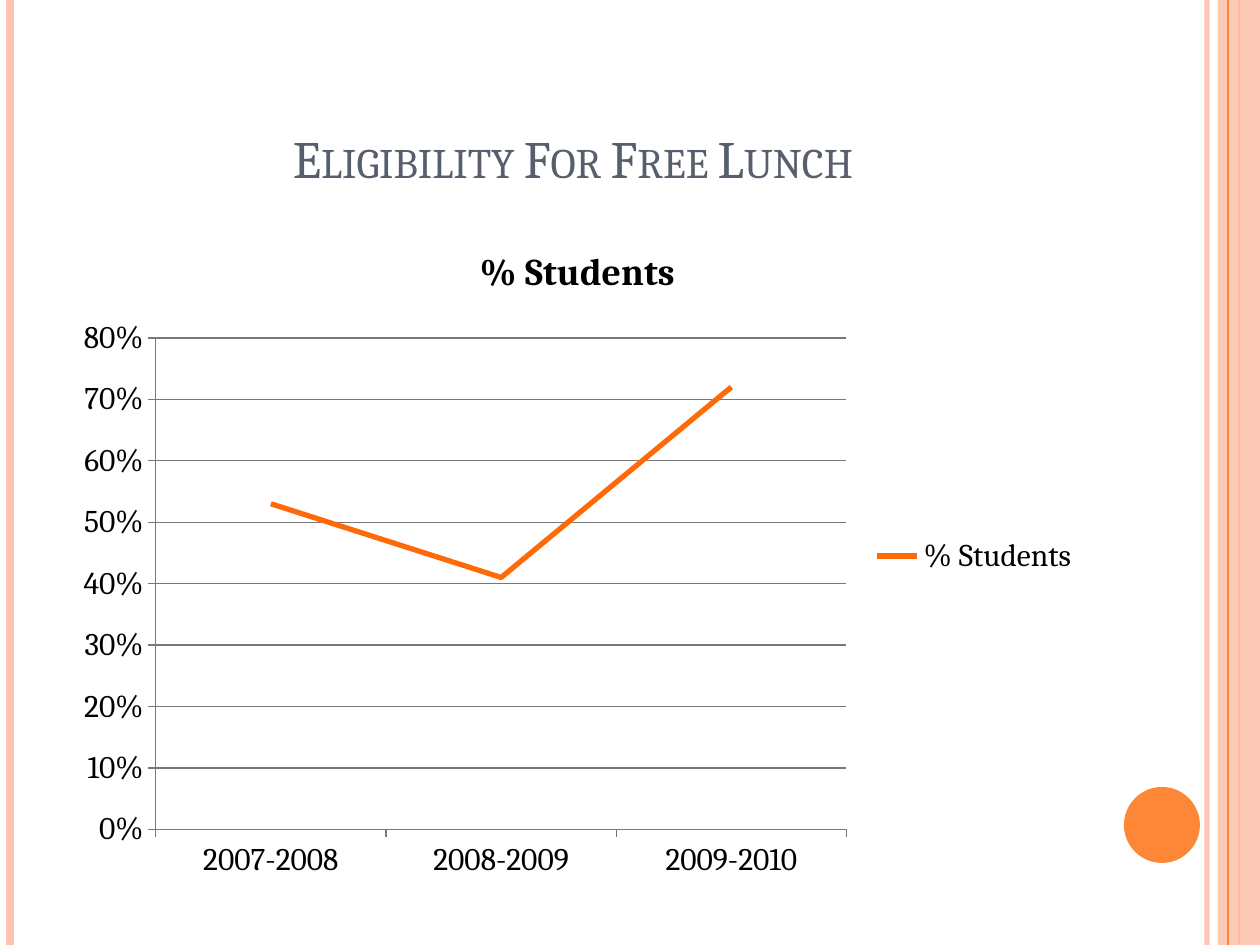
from lxml.etree import SubElement
from pptx import Presentation
from pptx.chart.data import CategoryChartData
from pptx.dml.color import RGBColor
from pptx.enum.chart import XL_CHART_TYPE as ChartType, XL_LEGEND_POSITION as LegendPos, XL_TICK_MARK as Tick
from pptx.enum.shapes import MSO_CONNECTOR as Connector, MSO_SHAPE as Shape
from pptx.enum.text import MSO_ANCHOR as Anchor, PP_ALIGN as Align
from pptx.oxml.ns import qn
from pptx.util import Emu, Pt

SCALE = 914400 / 126
WIDTH, HEIGHT = 1260, 945
FONT = "Cambria"
COLORS = {
    "peach": "FEC3AE",
    "orange": "FE8637",
    "trend": "FF6A08",
    "slate": "575F6D",
    "black": "000000",
    "grid": "787878",
}
ENROLMENT_YEARS = ["2007-2008", "2008-2009", "2009-2010"]
ELIGIBLE_SHARES = [0.53, 0.41, 0.72]


def px(length):
    return Emu(round(length * SCALE))


def box(*lengths):
    return [px(length) for length in lengths]


def rgb(name):
    return RGBColor.from_string(COLORS[name])


def assign(target, values):
    for name, value in values.items():
        setattr(target, name, value)


def style_font(font, size, color="black", bold=False):
    assign(font, {"name": FONT, "size": Pt(size), "bold": bold})
    font.color.rgb = rgb(color)


def style_line(line, color, points):
    line.color.rgb = rgb(color)
    line.width = Pt(points)


def set_alpha(fill_parent, percent):
    color = fill_parent.find(".//" + qn("a:srgbClr"))
    SubElement(color, qn("a:alpha")).set("val", str(percent * 1000))


def add_stripe(slide, x, color, points, alpha=100):
    stripe = slide.shapes.add_connector(Connector.STRAIGHT, *box(x, 0, x, HEIGHT))
    style_line(stripe.line, color, points)
    properties = stripe._element.spPr
    if alpha < 100:
        set_alpha(properties, alpha)
    SubElement(properties, qn("a:effectLst"))


def add_solid(slide, preset, bounds, color, alpha=100):
    solid = slide.shapes.add_shape(preset, *box(*bounds))
    solid.shadow.inherit = False
    solid.fill.solid()
    solid.fill.fore_color.rgb = rgb(color)
    solid.line.fill.background()
    if alpha < 100:
        set_alpha(solid._element.spPr, alpha)


def add_title(slide, text, bounds):
    frame = slide.shapes.add_textbox(*box(*bounds)).text_frame
    assign(frame, {"word_wrap": True, "vertical_anchor": Anchor.BOTTOM})
    heading = frame.paragraphs[0]
    heading.alignment = Align.CENTER
    run = heading.add_run()
    run.text = text
    style_font(run.font, 30, "slate")
    run.font._element.set("cap", "small")


def add_lunch_chart(slide, bounds):
    lunch_data = CategoryChartData(number_format="0%")
    lunch_data.categories = ENROLMENT_YEARS
    lunch_data.add_series("% Students", ELIGIBLE_SHARES)
    chart = slide.shapes.add_chart(ChartType.LINE, *box(*bounds), lunch_data).chart
    style_font(chart.font, 18)

    chart.has_title = True
    heading = chart.chart_title.text_frame
    heading.text = "% Students"
    style_font(heading.paragraphs[0].runs[0].font, 21.6, bold=True)
    chart.chart_title.include_in_layout = False

    chart.has_legend = True
    assign(chart.legend, {"position": LegendPos.RIGHT, "include_in_layout": False})

    for axis in (chart.category_axis, chart.value_axis):
        assign(axis, {"major_tick_mark": Tick.OUTSIDE, "minor_tick_mark": Tick.NONE})
        style_line(axis.format.line, "grid", 0.75)
    shares = chart.value_axis
    assign(shares, {"minimum_scale": 0, "maximum_scale": 0.8, "major_unit": 0.1,
                    "has_major_gridlines": True})
    style_line(shares.major_gridlines.format.line, "grid", 0.75)
    assign(shares.tick_labels, {"number_format": "0%", "number_format_is_linked": False})

    plot = chart.plots[0]
    plot.vary_by_categories = False
    trend = plot.series[0]
    trend.smooth = False
    style_line(trend.format.line, "trend", 3)


def main():
    deck = Presentation()
    assign(deck, {"slide_width": px(WIDTH), "slide_height": px(HEIGHT)})
    slide = deck.slides.add_slide(deck.slide_layouts[6])

    add_stripe(slide, 1207, "peach", 3, alpha=93)
    add_stripe(slide, 10, "peach", 4.5)
    add_stripe(slide, 1239, "orange", 1.5)
    add_solid(slide, Shape.RECTANGLE, (1218, 0, 42, HEIGHT), "peach", alpha=87)
    add_stripe(slide, 1228, "orange", 0.75)
    add_solid(slide, Shape.OVAL, (1124, 787, 76, 76), "orange")
    add_title(slide, "Eligibility For Free Lunch ", (63, 38, 1029, 157))
    add_lunch_chart(slide, (63, 220, 1029, 672))

    deck.save("out.pptx")


if __name__ == "__main__":
    main()
